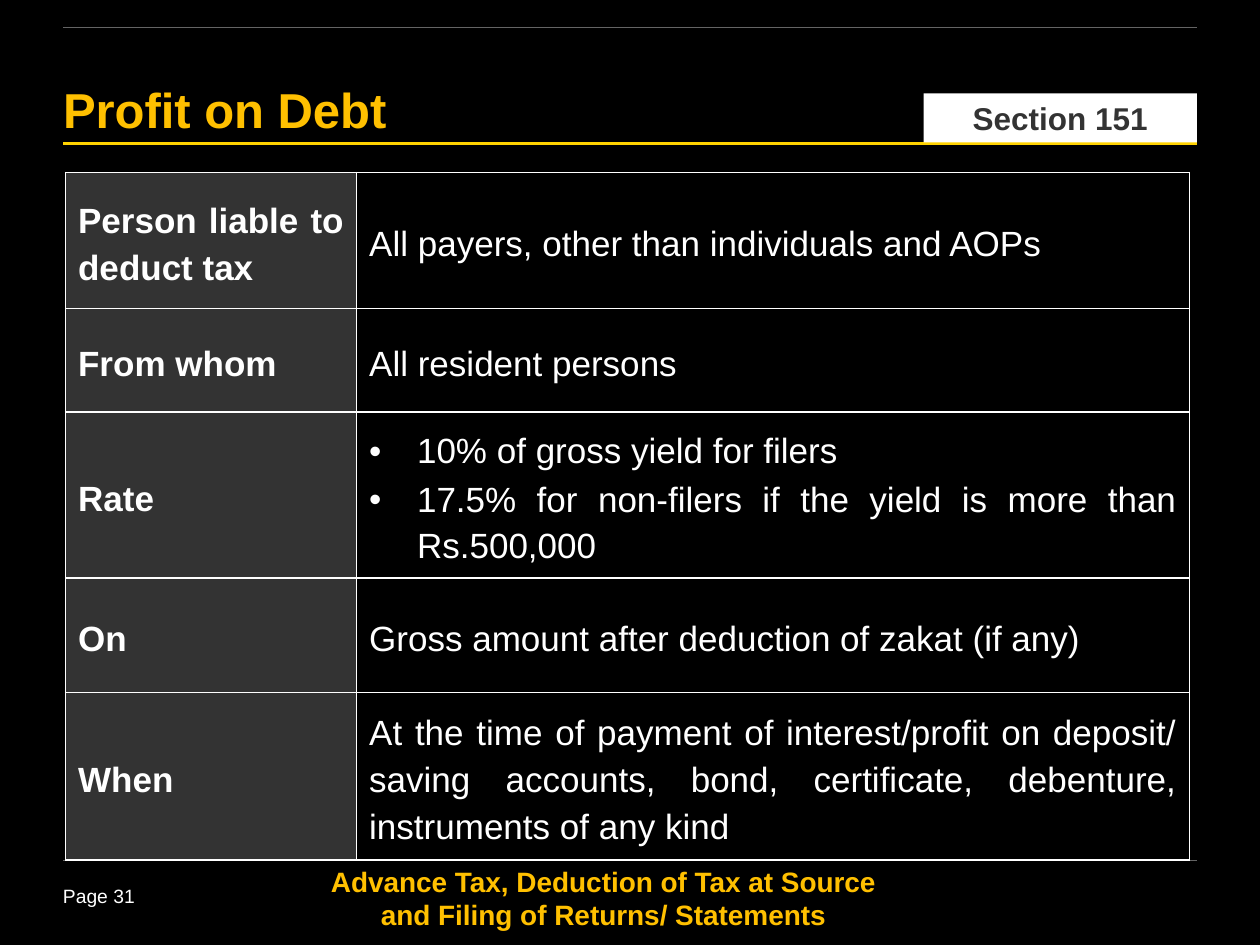
from dataclasses import dataclass

from lxml import etree
from pptx import Presentation
from pptx import util as u
from pptx.dml.color import RGBColor
from pptx.enum import shapes, text
from pptx.oxml import ns

Inches, Pt = u.Inches, u.Pt
ALIGN = text.PP_ALIGN


@dataclass(frozen=True)
class Theme:
    font: str = "Arial"
    back: str = "000000"
    white: str = "FFFFFF"
    dark: str = "333333"
    amber: str = "FFC000"
    yellow: str = "FFD200"
    grey: str = "646464"
    title: int = 28
    body: int = 20
    tag: int = 18
    footer: int = 16
    page: int = 11


T = Theme()
ROWS = [
    (1.08, "Person liable to deduct tax", ["All payers, other than individuals and AOPs"]),
    (0.82, "From whom", ["All resident persons"]),
    (1.1, "Rate", ["10% of gross yield for filers",
                   "17.5% for non-filers if the yield is more than Rs.500,000"]),
    (0.91, "On", ["Gross amount after deduction of zakat (if any)"]),
    (1.33, "When", ["At the time of payment of interest/profit on deposit/ saving accounts, "
                    "bond, certificate, debenture, instruments of any kind"]),
]


def rgb(value):
    return RGBColor.from_string(value)


def inches(box):
    return [Inches(v) for v in box]


def set_attrs(obj, values):
    for name, value in values.items():
        setattr(obj, name, value)


def add_text(p, content, size, color, bold=False, **paragraph):
    set_attrs(p, paragraph)
    r = p.add_run()
    r.text = content
    set_attrs(r.font, {"name": T.font, "size": Pt(size), "bold": bold})
    r.font.color.rgb = rgb(color)


def fit_frame(tf, top=0, anchor=text.MSO_ANCHOR.TOP):
    set_attrs(tf, {"word_wrap": True, "vertical_anchor": anchor, "margin_left": 0,
                   "margin_top": Inches(top), "margin_right": 0, "margin_bottom": 0})
    return tf.paragraphs[0]


def add_label(s, box, content, size, color, bold=False, top=0, **paragraph):
    sp = s.shapes.add_textbox(*inches(box))
    add_text(fit_frame(sp.text_frame, top), content, size, color, bold, **paragraph)


def add_rule(s, left, y, width, color, weight):
    line = s.shapes.add_connector(shapes.MSO_CONNECTOR.STRAIGHT,
                                  *inches((left, y, left + width, y)))
    line.line.color.rgb = rgb(color)
    line.line.width = Pt(weight)
    etree.SubElement(line._element.spPr, ns.qn("a:effectLst"))


def add_header(s, left, top, width, height):
    add_rule(s, left, top, width, T.grey, 0.5)
    add_rule(s, left, top + height, width, T.yellow, 1.5)

    # Section tag, flush right above the yellow rule
    tag_width = 2.17
    tag = s.shapes.add_shape(shapes.MSO_SHAPE.RECTANGLE,
                             *inches((left + width - tag_width, top + 0.52, tag_width, 0.39)))
    tag.shadow.inherit = False
    tag.fill.solid()
    tag.fill.fore_color.rgb = rgb(T.white)
    tag.line.fill.background()
    add_text(fit_frame(tag.text_frame, 0.04, text.MSO_ANCHOR.MIDDLE), "Section 151",
             T.tag, T.dark, True, alignment=ALIGN.CENTER, line_spacing=0.85)

    add_label(s, (left, top + 0.44, 6.58, 0.49), "Profit on Debt", T.title, T.amber, True,
              top=0.04, line_spacing=0.85)


def add_borders(cell):
    tc_pr = cell._tc.get_or_add_tcPr()
    for side in ("lnL", "lnR", "lnT", "lnB"):
        ln = etree.SubElement(tc_pr, ns.qn(f"a:{side}"), w=str(Pt(1)))
        fill = etree.SubElement(ln, ns.qn("a:solidFill"))
        etree.SubElement(fill, ns.qn("a:srgbClr"), val=T.white)


def add_bullet(p):
    p_pr = p._p.get_or_add_pPr()
    indent = Inches(0.38)
    p_pr.set("marL", str(indent))
    p_pr.set("indent", str(-indent))
    etree.SubElement(p_pr, ns.qn("a:buFont"), typeface=T.font)
    etree.SubElement(p_pr, ns.qn("a:buChar"), char="•")


def fill_cell(cell, lines, fill, bold, after):
    add_borders(cell)
    cell.fill.solid()
    cell.fill.fore_color.rgb = rgb(fill)
    set_attrs(cell, {"vertical_anchor": text.MSO_ANCHOR.MIDDLE,
                     "margin_left": Inches(0.1), "margin_right": Inches(0.1),
                     "margin_top": Inches(0.05), "margin_bottom": Inches(0.05)})
    tf = cell.text_frame
    for i, line in enumerate(lines):
        p = tf.add_paragraph() if i else tf.paragraphs[0]
        if len(lines) > 1:
            add_bullet(p)
        add_text(p, line, T.body, T.white, bold, alignment=ALIGN.JUSTIFY,
                 line_spacing=1.2, space_after=Pt(after))


def add_rules_table(s, left, top, width, label_width):
    height = sum(row[0] for row in ROWS)
    table = s.shapes.add_table(len(ROWS), 2, *inches((left, top, width, height))).table
    set_attrs(table, {"first_row": False, "horz_banding": False})
    for column, size in zip(table.columns, (label_width, width - label_width)):
        column.width = Inches(size)
    for i, (row_height, label, lines) in enumerate(ROWS):
        table.rows[i].height = Inches(row_height)
        fill_cell(table.cell(i, 0), [label], T.dark, True, 1.2)
        fill_cell(table.cell(i, 1), lines, T.back, False, 10 if label == "When" else 1.2)


def add_footer(s, left, top, width):
    add_rule(s, left, top, width, T.grey, 0.25)
    add_label(s, (left, top + 0.19, 0.73, 0.22), "Page 31", T.page, T.white)
    add_label(s, (left + 2, top + 0.03, 4.58, 0.52),
              "Advance Tax, Deduction of Tax at Source and Filing of Returns/ Statements",
              T.footer, T.amber, True, alignment=ALIGN.CENTER)


def main():
    prs = Presentation()
    set_attrs(prs, {"slide_width": Inches(10), "slide_height": Inches(7.5)})
    s = prs.slides.add_slide(prs.slide_layouts[6])
    s.background.fill.solid()
    s.background.fill.fore_color.rgb = rgb(T.back)
    add_footer(s, 0.5, 6.83, 9)
    add_header(s, 0.5, 0.22, 9, 0.92)
    add_rules_table(s, 0.52, 1.37, 8.92, 2.31)
    prs.save("out.pptx")


if __name__ == "__main__":
    main()
